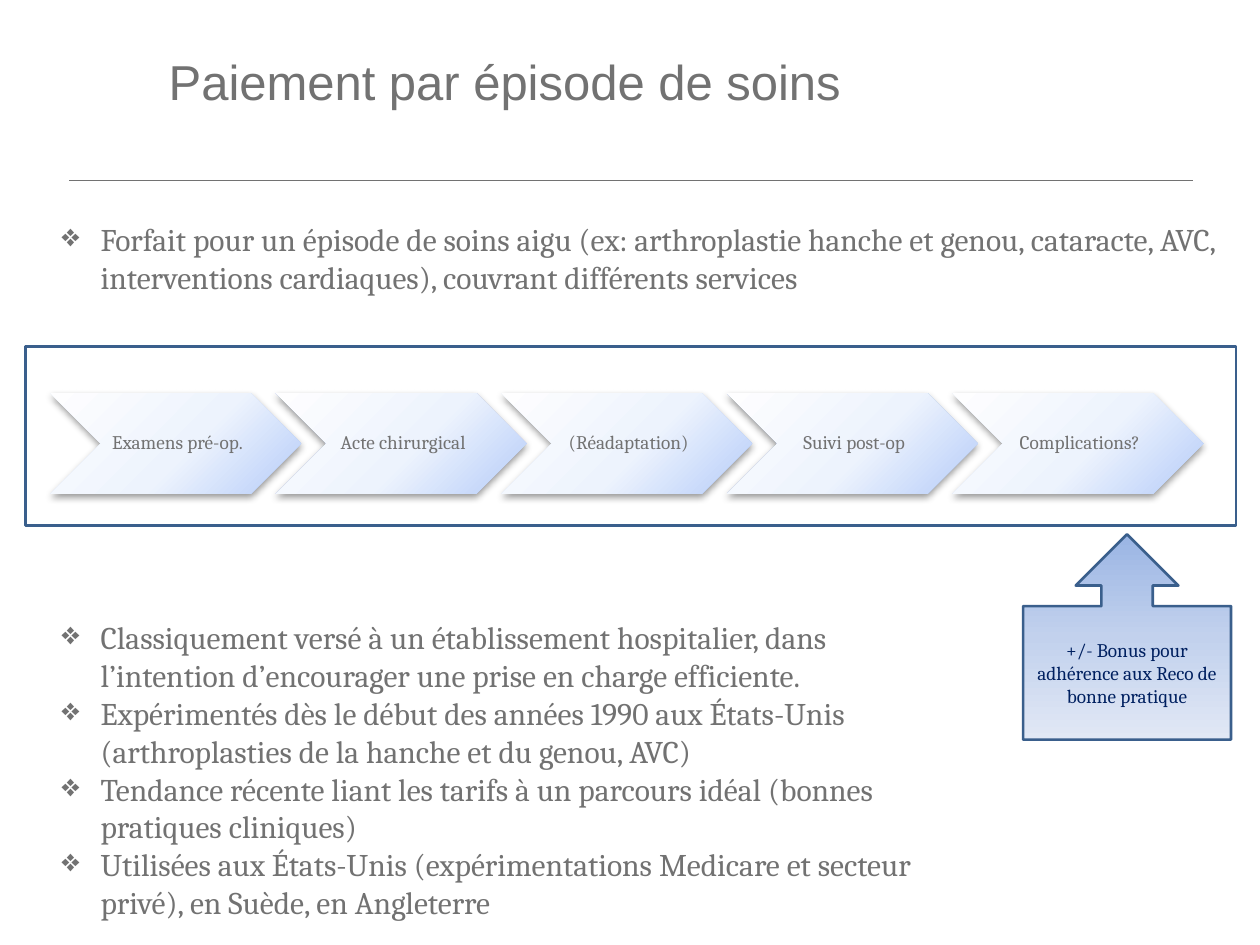
import lxml.etree
import pptx
import pptx.dml.color
import pptx.enum.shapes
import pptx.enum.text
import pptx.oxml
import pptx.oxml.ns
import pptx.util

Inches = pptx.util.Inches
Pt = pptx.util.Pt
Shape = pptx.enum.shapes.MSO_SHAPE
Anchor = pptx.enum.text.MSO_ANCHOR
Align = pptx.enum.text.PP_ALIGN
qn = pptx.oxml.ns.qn
NAMESPACE = pptx.oxml.ns.nsdecls("a")

COLORS = {
    "grey": "727272",
    "outline": "3A5F8C",
    "navy": "002060",
    "shadow": "000000",
}
STEP_STOPS = [(0, "FEFEFF"), (55, "EDF3FD"), (100, "B5CCF9")]
STEP_SHADE = '<a:path path="circle"><a:fillToRect l="-40000" t="-90000" r="140000" b="190000"/></a:path>'
BONUS_STOPS = [(0, "9AB5E4"), (50, "C2D1ED"), (100, "E1E8F5")]
BONUS_SHADE = '<a:lin ang="5400000" scaled="0"/>'

STEPS = ["Examens pré-op.", "Acte chirurgical", "(Réadaptation)", "Suivi post-op", "Complications?"]
SCOPE = [
    "Forfait pour un épisode de soins aigu (ex: arthroplastie hanche et genou, cataracte, AVC, "
    "interventions cardiaques), couvrant différents services",
]
FACTS = [
    "Classiquement versé à un établissement hospitalier, dans l’intention d’encourager "
    "une prise en charge efficiente.",
    "Expérimentés dès le début des années 1990 aux États-Unis (arthroplasties de la hanche et du genou, AVC)",
    "Tendance récente liant les tarifs à un parcours idéal (bonnes pratiques cliniques)",
    "Utilisées aux États-Unis (expérimentations Medicare et secteur privé), en Suède, en Angleterre",
]


def color(name):
    return pptx.dml.color.RGBColor.from_string(COLORS[name])


def write(para, text, font="Cambria", size=18, ink="grey", align=Align.LEFT, spacing=None, bullet=None):
    if bullet:
        properties = para._p.get_or_add_pPr()
        properties.set("marL", str(Inches(0.31)))
        properties.set("indent", str(-Inches(0.31)))
        lxml.etree.SubElement(properties, qn("a:buChar")).set("char", bullet)
    para.alignment = align
    if spacing:
        para.line_spacing = spacing
    span = para.add_run()
    span.text = text
    span.font.name = font
    span.font.size = Pt(size)
    span.font.color.rgb = color(ink)


class Page:
    def __init__(self, deck):
        self.shapes = deck.slides.add_slide(deck.slide_layouts[6]).shapes

    def rule(self, left, top, width):
        line = self.shapes.add_connector(
            pptx.enum.shapes.MSO_CONNECTOR.STRAIGHT,
            Inches(left), Inches(top), Inches(left + width), Inches(top))
        line.line.color.rgb = color("grey")
        line.line.width = Pt(0.5)
        lxml.etree.SubElement(line._element.spPr, qn("a:effectLst"))

    def text(self, area, texts, anchor=Anchor.TOP, **style):
        frame = self.shapes.add_textbox(*map(Inches, area)).text_frame
        frame.word_wrap = True
        frame.vertical_anchor = anchor
        for index, text in enumerate(texts):
            para = frame.add_paragraph() if index else frame.paragraphs[0]
            write(para, text, **style)

    def shape(self, kind, area, outlined=True):
        box = self.shapes.add_shape(kind, *map(Inches, area))
        box.shadow.inherit = False
        box.fill.background()
        if outlined:
            box.line.color.rgb = color("outline")
            box.line.width = Pt(1.5)
        else:
            box.line.fill.background()
        return box

    def gradient(self, box, stops, shade):
        marks = "".join(
            f'<a:gs pos="{place * 1000}"><a:srgbClr val="{tint}"/></a:gs>' for place, tint in stops)
        fill = pptx.oxml.parse_xml(
            f'<a:gradFill {NAMESPACE} rotWithShape="1"><a:gsLst>{marks}</a:gsLst>{shade}</a:gradFill>')
        properties = box._element.spPr
        properties.replace(properties.find(qn("a:noFill")), fill)

    def label(self, box, text, **style):
        box.text_frame.word_wrap = True
        box.text_frame.vertical_anchor = Anchor.MIDDLE
        write(box.text_frame.paragraphs[0], text, size=11, align=Align.CENTER, **style)

    def step(self, area, text):
        box = self.shape(Shape.CHEVRON, area, outlined=False)
        self.gradient(box, STEP_STOPS, STEP_SHADE)
        box._element.spPr.find(qn("a:effectLst")).append(pptx.oxml.parse_xml(
            f'<a:outerShdw {NAMESPACE} blurRad="{Pt(4.1)}" dist="{Pt(2)}" dir="5400000" rotWithShape="0">'
            f'<a:srgbClr val="{COLORS["shadow"]}"><a:alpha val="40000"/></a:srgbClr></a:outerShdw>'))
        frame = box.text_frame
        frame.margin_left = Inches(0.05)
        frame.margin_right = frame.margin_top = frame.margin_bottom = Inches(0.02)
        self.label(box, text, spacing=0.9)

    def callout(self, area, text):
        box = self.shape(Shape.UP_ARROW_CALLOUT, area)
        self.gradient(box, BONUS_STOPS, BONUS_SHADE)
        self.label(box, text, ink="navy")


def main():
    deck = pptx.Presentation()
    deck.slide_width = Inches(10)
    deck.slide_height = Inches(7.5)
    page = Page(deck)
    page.rule(0.55, 1.43, 8.92)
    page.text((1.24, 0.02, 8.42, 1.25), ["Paiement par épisode de soins"],
              anchor=Anchor.MIDDLE, font="Arial", size=28)
    for index, name in enumerate(STEPS):
        page.step((0.4 + 1.79 * index, 3.12, 1.99, 0.8), name)
    page.shape(Shape.RECTANGLE, (0.2, 2.75, 9.61, 1.42))
    page.text((0.39, 1.7, 9.61, 0.71), SCOPE, bullet="❖")
    page.text((0.39, 4.86, 7.09, 2.53), FACTS, bullet="❖")
    page.callout((8.12, 4.24, 1.65, 1.63), "+/- Bonus pour adhérence aux Reco de bonne pratique")
    deck.save("out.pptx")


if __name__ == "__main__":
    main()
